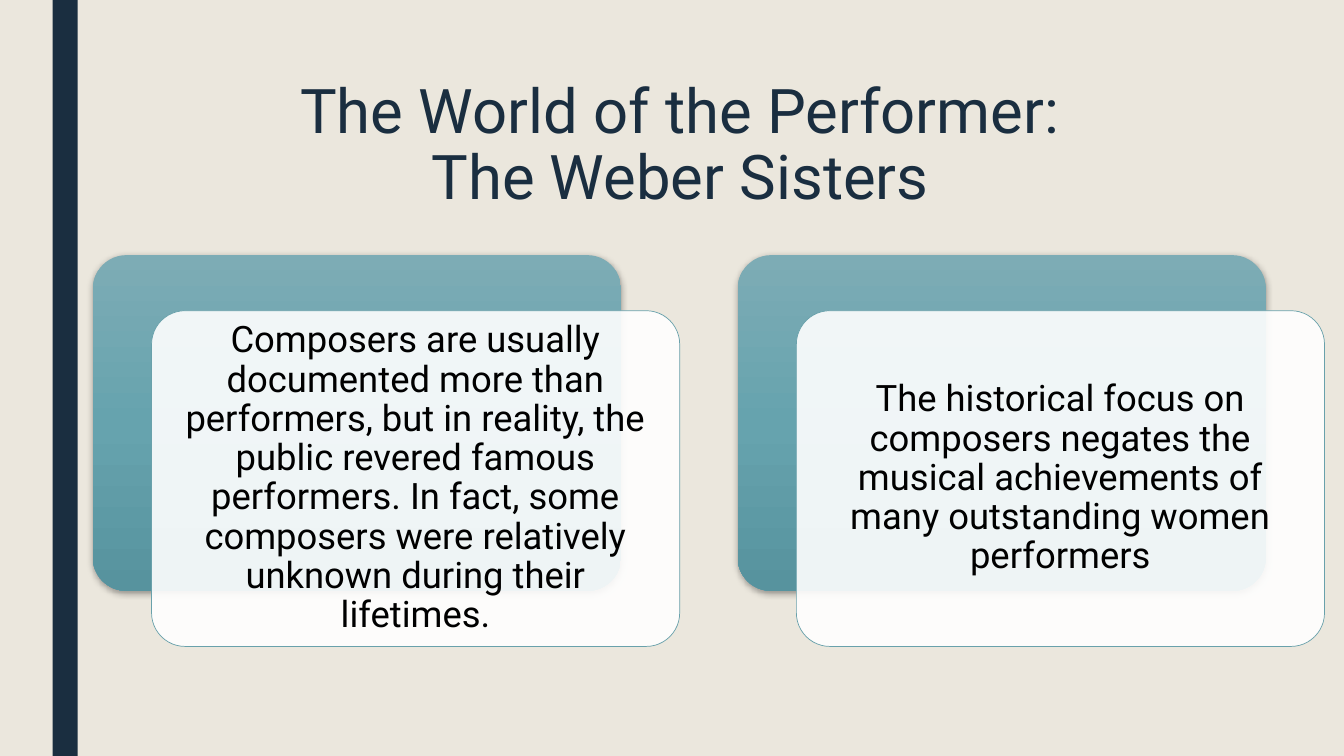
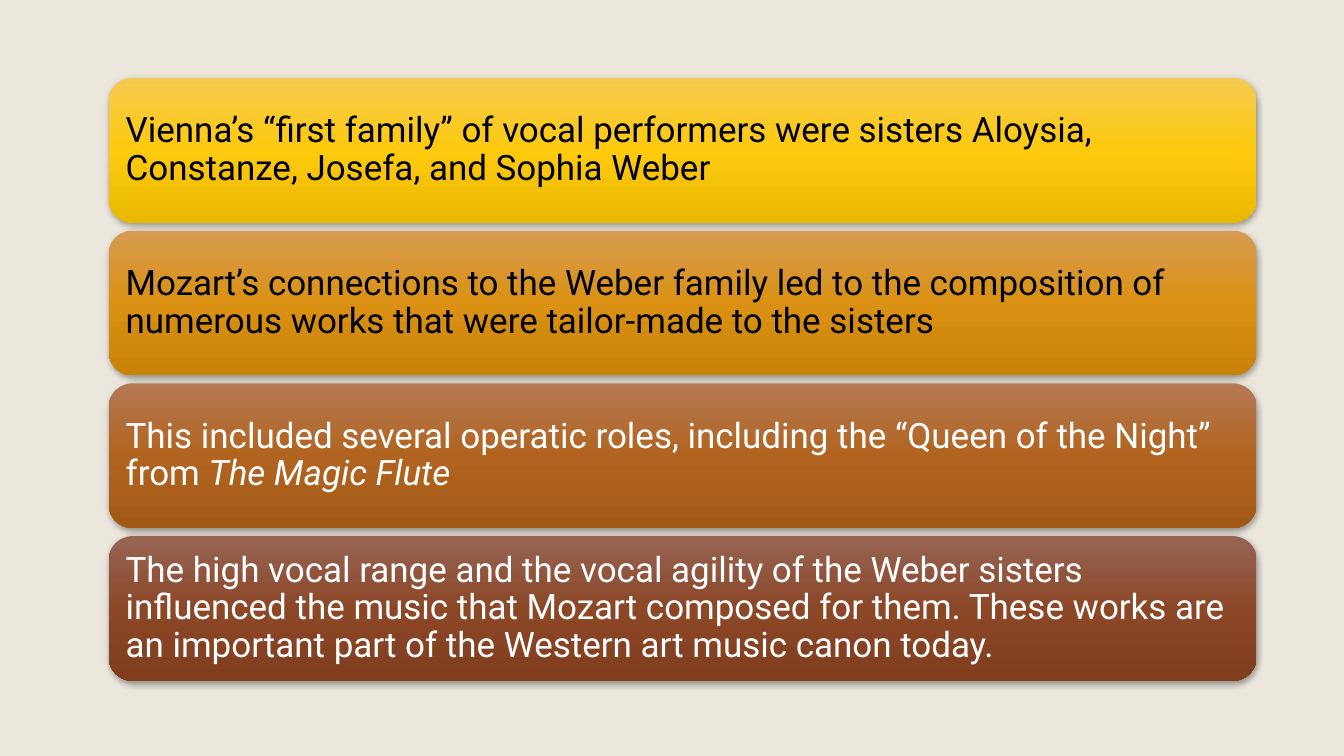
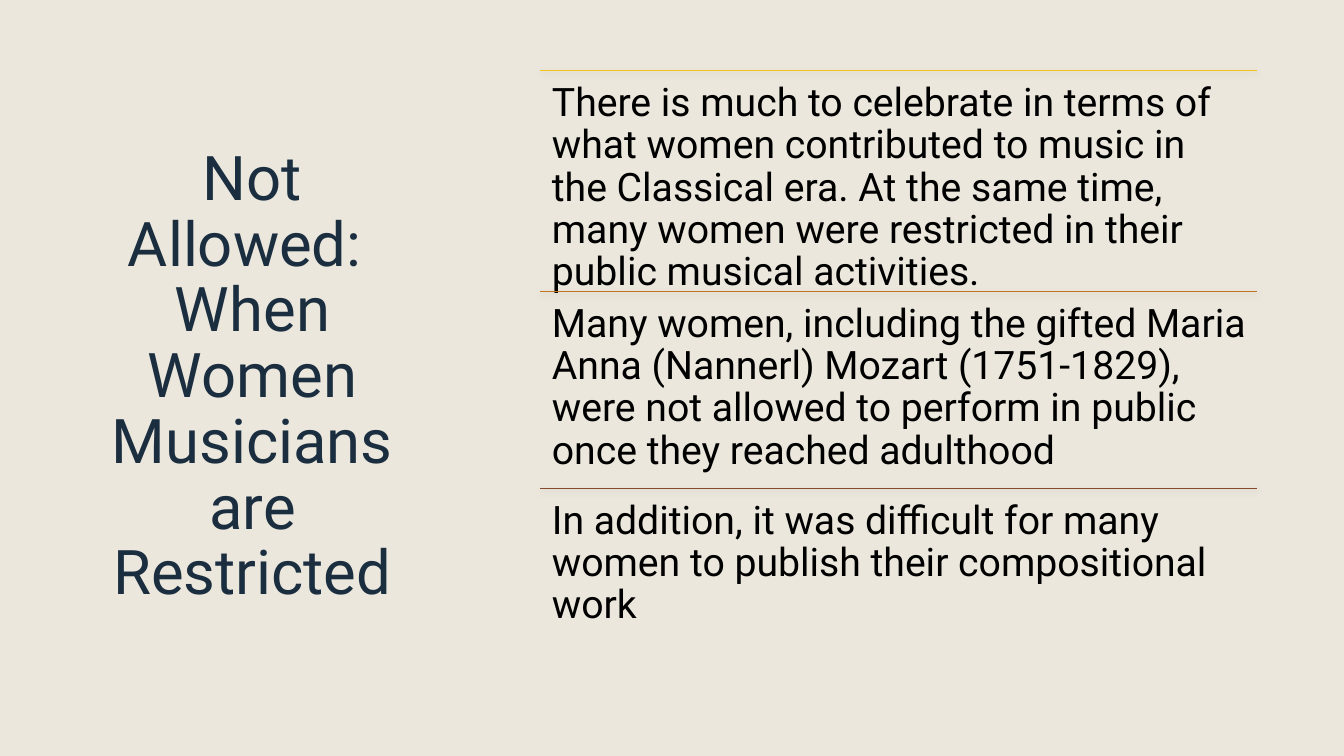
import copy
from itertools import accumulate

from lxml import etree
from pptx import Presentation
from pptx import util as u
from pptx.dml.color import RGBColor
from pptx.enum import shapes, text
from pptx.oxml.ns import qn
from pptx.text.text import Font

# Content
SISTERS_TITLE = "The World of the Performer:\vThe Weber Sisters"
CARDS = [
    "Composers are usually documented more than performers, but in reality, "
    "the public revered famous performers. In fact, some composers were "
    "relatively unknown during their lifetimes.",
    "The historical focus on composers negates the musical achievements of "
    "many outstanding women performers",
]
# Text (italics between asterisks), text colour, gradient
FACTS = [
    ("Vienna’s “first family” of vocal performers were sisters Aloysia, "
     "Constanze, Josefa, and Sophia Weber",
     "000000", ("F6CB51", "FDCA0D", "EAB902")),
    ("Mozart’s connections to the Weber family led to the composition of "
     "numerous works that were tailor-made to the sisters",
     "000000", ("D79B51", "DA9113", "CA8309")),
    ("This included several operatic roles, including the “Queen of the "
     "Night” from *The Magic Flute*",
     "FFFFFF", ("B47953", "B1641F", "A35916")),
    ("The high vocal range and the vocal agility of the Weber sisters "
     "influenced the music that Mozart composed for them. These works are an "
     "important part of the Western art music canon today.",
     "FFFFFF", ("966454", "8C4727", "803E1F")),
]
RESTRICTED_TITLE = "Not Allowed: \vWhen Women Musicians are Restricted"
# Text, rule colour, height in cm
RESTRICTIONS = [
    ("There is much to celebrate in terms of what women contributed to music "
     "in the Classical era. At the same time, many women were restricted in "
     "their public musical activities.", "F2C418", 5.56),
    ("Many women, including the gifted Maria Anna (Nannerl) Mozart "
     "(1751-1829), were not allowed to perform in public once they reached "
     "adulthood", "BD7821", 4.97),
    ("In addition, it was difficult for many women to publish their "
     "compositional work", "87492C", 4.95),
]

# Shared look
FONT, NAVY, CREAM, BLACK = "Roboto", "1A2E40", "EBE7DD", "000000"
TEAL = ("7DACB5", "66A3AE", "57939E")
WIDTH, HEIGHT = 33.87, 19.05
RECT, ROUND = shapes.MSO_SHAPE.RECTANGLE, shapes.MSO_SHAPE.ROUNDED_RECTANGLE
TOP, MIDDLE = text.MSO_ANCHOR.TOP, text.MSO_ANCHOR.MIDDLE
LEFT, CENTER = text.PP_ALIGN.LEFT, text.PP_ALIGN.CENTER


def rgb(value):
    return RGBColor.from_string(value)


def apply(target, values):
    for key, value in values.items():
        setattr(target, key, value)


def style_font(font, size, color):
    apply(font, {"name": FONT, "size": u.Pt(size)})
    font.color.rgb = rgb(color)


def write(shape, words, size, color, inset, align=LEFT, anchor=MIDDLE):
    frame = shape.text_frame
    margin = u.Cm(inset)
    apply(frame, {"word_wrap": True, "vertical_anchor": anchor,
                  "margin_left": margin, "margin_right": margin,
                  "margin_top": margin, "margin_bottom": margin})
    paragraph = frame.paragraphs[0]
    apply(paragraph, {"alignment": align, "line_spacing": 0.9})
    for i, part in enumerate(words.split("*")):
        if part:
            run = paragraph.add_run()
            run.text = part
            style_font(run.font, size, color)
            if i % 2:
                run.font.italic = True


def fill_gradient(shape, colors):
    shape.fill.gradient()
    shape.fill.gradient_angle = 270
    stop_list = shape.element.spPr.find(".//" + qn("a:gsLst"))
    stop_list.append(copy.deepcopy(stop_list[0]))
    for stop, color, position in zip(shape.fill.gradient_stops, colors, (0, 0.5, 1)):
        stop.color.rgb = rgb(color)
        stop.position = position


def add_shadow(shape):
    properties = shape.element.spPr
    effects = properties.find(qn("a:effectLst"))
    if effects is None:
        effects = etree.SubElement(properties, qn("a:effectLst"))
    shadow = etree.SubElement(effects, qn("a:outerShdw"), blurRad=str(u.Pt(4.5)),
                              dist=str(u.Pt(1.5)), dir="5400000", rotWithShape="0")
    color = etree.SubElement(shadow, qn("a:srgbClr"), val=BLACK)
    etree.SubElement(color, qn("a:alpha"), val="35000")


def add_box(slide, kind, place, fill, corner=None):
    """A tuple of colours gives a shaded box with a shadow."""
    box = slide.shapes.add_shape(kind, *map(u.Cm, place))
    box.shadow.inherit = False
    box.line.fill.background()
    if corner:
        box.adjustments[0] = corner
    if isinstance(fill, tuple):
        fill_gradient(box, fill)
        add_shadow(box)
    else:
        box.fill.solid()
        box.fill.fore_color.rgb = rgb(fill)
    return box


def place_title(slide, words, place):
    title = slide.shapes.title
    title.text_frame.text = words
    apply(title, dict(zip(("left", "top", "width", "height"), map(u.Cm, place))))
    return title


def add_cover(slide):
    cover = add_box(slide, RECT, (0, 0, WIDTH, HEIGHT), CREAM)
    slide.shapes.element.insert(2, cover.element)


def style_master(master, slide):
    master.background.fill.solid()
    master.background.fill.fore_color.rgb = rgb(CREAM)
    # Title style
    level = master.element.find(".//" + qn("p:titleStyle")).find(qn("a:lvl1pPr"))
    style_font(Font(level.find(qn("a:defRPr"))), 44, NAVY)
    spacing = etree.Element(qn("a:lnSpc"))
    etree.SubElement(spacing, qn("a:spcPct"), val="89000")
    level.insert(0, spacing)
    apply(master.placeholders[0].text_frame,
          {"vertical_anchor": TOP, "auto_size": text.MSO_AUTO_SIZE.NONE})
    # Side band, moved from the slide to the master
    band = add_box(slide, RECT, (1.33, 0, 0.63, HEIGHT), NAVY)
    band.element.xpath(".//p:cNvPr")[0].set("id", "20")
    master.shapes.element.insert(2, band.element)


def build_sisters(slide):
    place_title(slide, SISTERS_TITLE, (3.81, 1.91, 26.67, 4.11))
    left, top, width, height = 2.34, 6.43, 13.31, 8.46
    pitch, shift_x, shift_y = 16.25, 1.48, 1.4
    for i, words in enumerate(CARDS):
        x = left + i * pitch
        add_box(slide, ROUND, (x, top, width, height), TEAL, 0.1)
        card = add_box(slide, ROUND, (x + shift_x, top + shift_y, width, height),
                       "FFFFFF", 0.1)
        white = card.element.spPr.find(qn("a:solidFill"))[0]
        etree.SubElement(white, qn("a:alpha"), val="90000")
        card.line.color.rgb = rgb("69A1AB")
        card.line.width = u.Pt(0.5)
        write(card, words, 26, BLACK, 0.28, CENTER)


def build_facts(slide):
    add_cover(slide)
    height, gap = 3.65, 0.2
    for i, (words, color, gradient) in enumerate(FACTS):
        place = (2.74, 1.96 + i * (height + gap), 28.93, height)
        write(add_box(slide, ROUND, place, gradient), words, 25, color, 0.25)


def build_restrictions(slide):
    add_cover(slide)
    title = place_title(slide, RESTRICTED_TITLE, (1.78, 1.78, 9.17, 15.49))
    title.text_frame.vertical_anchor = MIDDLE
    left, width = 13.61, 18.08
    tops = accumulate((row[2] for row in RESTRICTIONS), initial=1.78)
    for (words, color, height), top in zip(RESTRICTIONS, tops):
        rule = slide.shapes.add_connector(
            shapes.MSO_CONNECTOR.STRAIGHT,
            *map(u.Cm, (left, top, left + width, top)))
        rule.line.color.rgb = rgb(color)
        rule.line.width = u.Pt(0.5)
        add_shadow(rule)
        passage = slide.shapes.add_textbox(*map(u.Cm, (left, top, width, height)))
        write(passage, words, 28, BLACK, 0.3, anchor=TOP)


def main():
    deck = Presentation()
    deck.slide_width, deck.slide_height = u.Cm(WIDTH), u.Cm(HEIGHT)
    title_only, blank = deck.slide_layouts[5], deck.slide_layouts[6]
    sisters, facts, restrictions = map(deck.slides.add_slide,
                                       (title_only, blank, title_only))
    style_master(deck.slide_master, sisters)
    build_sisters(sisters)
    build_facts(facts)
    build_restrictions(restrictions)
    deck.save("out.pptx")


if __name__ == "__main__":
    main()
